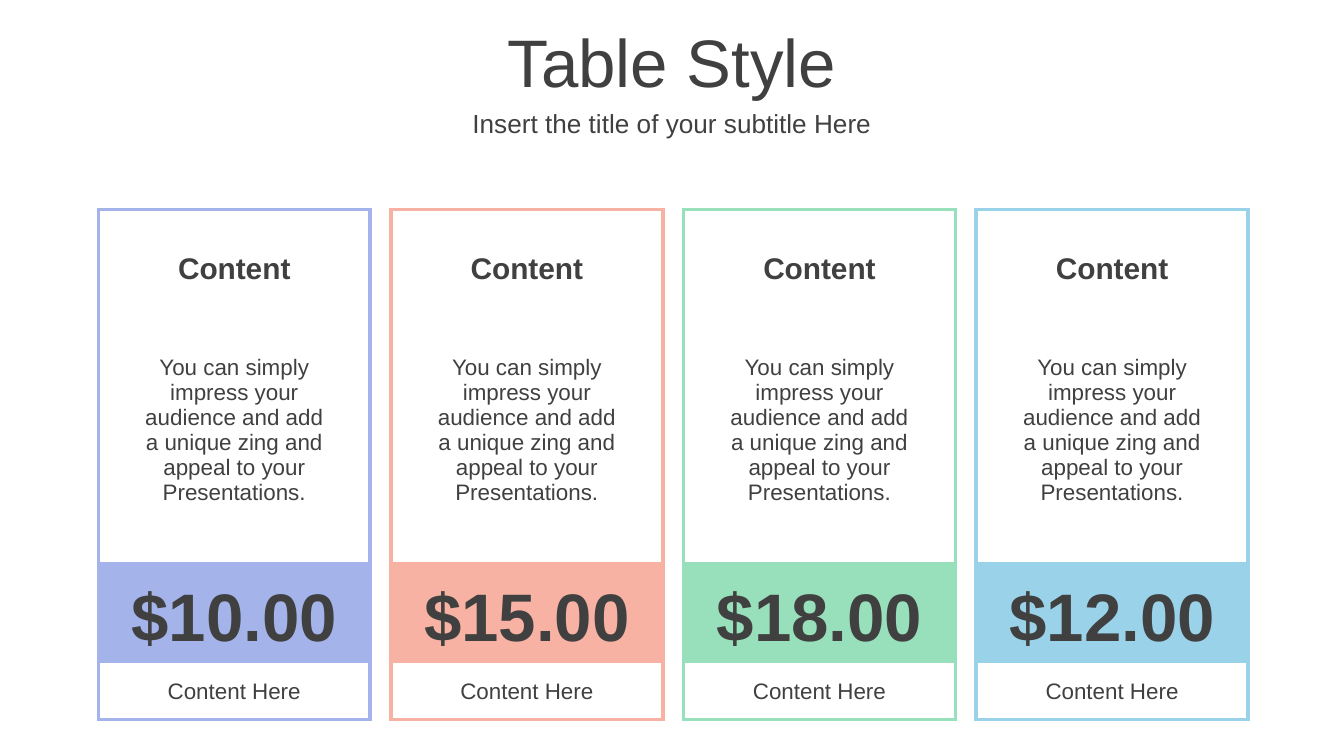
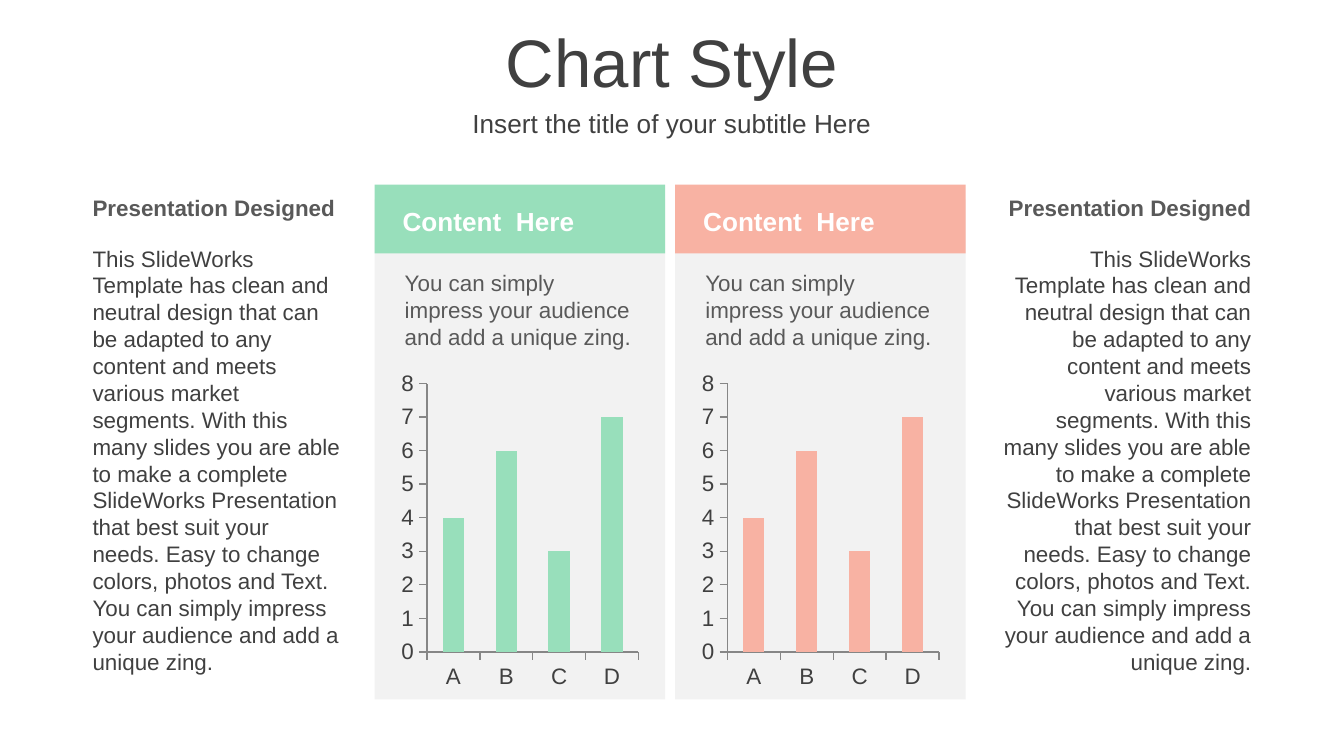
import lxml.etree
import pptx
import pptx.chart.data
import pptx.dml.color
import pptx.enum.chart
import pptx.enum.shapes
import pptx.enum.text
import pptx.oxml.ns
import pptx.util

Cm, Pt = pptx.util.Cm, pptx.util.Pt
ALIGN = pptx.enum.text.PP_ALIGN
ANCHOR = pptx.enum.text.MSO_ANCHOR

FONT = "Arial"
DARK, GREY, PALE, WHITE, AXIS = "404040", "595959", "F2F2F2", "FFFFFF", "868686"
BLUE, CORAL, GREEN, SKY = "A4B4EA", "F8B2A3", "98DFBB", "9AD3E9"

SUBTITLE = "Insert the title of your subtitle Here"
PLANS = [("$10.00", BLUE), ("$15.00", CORAL), ("$18.00", GREEN), ("$12.00", SKY)]
PLAN_NAME = "Content"
PLAN_TEXT = ("You can simply impress your audience and add a unique zing "
             "and appeal to your Presentations.")
PLAN_FOOT = "Content Here"

PANEL_HEADING = "Content  Here"
PANEL_INTRO = "You can simply impress your audience and add a unique zing."
PANEL_COLOURS = [GREEN, CORAL]
CATEGORIES, VALUES = ["A", "B", "C", "D"], [4, 6, 3, 7]
SIDE_HEADING = "Presentation Designed"
SIDE_TEXT = (
    "This SlideWorks Template has clean and neutral design that can be adapted "
    "to any content and meets various market segments. With this many slides "
    "you are able to make a complete SlideWorks Presentation that best suit your "
    "needs. Easy to change colors, photos and Text. You can simply impress your "
    "audience and add a unique zing.")

# Lengths in centimetres
SLIDE_SIZE = 25.4, 14.29
PLAN_LEFT, PLAN_TOP, PLAN_STEP = 1.86, 3.96, 5.53
PLAN_COLUMNS = [0.58, 3.92, 0.58]
PLAN_ROWS = [0.36, 1.07, 0.36, 1.07, 2.46, 0.36, 1.9, 1.07]
PANEL_LEFT, PANEL_STEP, PANEL_WIDTH = 7.08, 5.68, 5.49
SIDES = [(1.5, ALIGN.LEFT), (18.69, ALIGN.RIGHT)]
SIDE_WIDTH = 5.21
LINE = Pt(14.4)


def rgb(colour):
    return pptx.dml.color.RGBColor.from_string(colour)


def style_font(font, size, colour, bold=False):
    font.name, font.size, font.bold = FONT, Pt(size), bold
    font.color.rgb = rgb(colour)


def write(frame, text, size, colour, bold=False, align=ALIGN.LEFT, spacing=None):
    frame.text = text
    frame.word_wrap = True
    paragraph = frame.paragraphs[0]
    paragraph.alignment = align
    if spacing:
        paragraph.line_spacing = spacing
    style_font(paragraph.runs[0].font, size, colour, bold)


def add_text(slide, box, *text, **style):
    write(slide.shapes.add_textbox(*map(Cm, box)).text_frame, *text, **style)


def add_band(slide, box, colour):
    band = slide.shapes.add_shape(
        pptx.enum.shapes.MSO_SHAPE.RECTANGLE, *map(Cm, box))
    band.shadow.inherit = False
    band.fill.solid()
    band.fill.fore_color.rgb = rgb(colour)
    band.line.fill.background()


def add_slide(deck, title):
    """Add a slide with its centred title and subtitle."""
    slide = deck.slides.add_slide(deck.slide_layouts[0])
    headings = [(title, 36, 0.34, 1.6), (SUBTITLE, 14, 1.94, 0.79)]
    for holder, (text, size, top, height) in zip(slide.placeholders, headings):
        holder.left, holder.top = Cm(0), Cm(top)
        holder.width, holder.height = Cm(SLIDE_SIZE[0]), Cm(height)
        write(holder.text_frame, text, size, DARK, align=ALIGN.CENTER)
        holder.text_frame.paragraphs[0].space_before = Pt(0)
        holder.text_frame.vertical_anchor = ANCHOR.MIDDLE
        holder.text_frame.auto_size = pptx.enum.text.MSO_AUTO_SIZE.NONE
    return slide


def add_element(parent, tag, **attributes):
    return lxml.etree.SubElement(parent, pptx.oxml.ns.qn(tag), attributes)


def frame_cell(cell, outer, colour):
    """Draw the sides named in outer, and clear the other ones."""
    properties = cell._tc.get_or_add_tcPr()
    for side in "LRTB":
        line = add_element(properties, f"a:ln{side}", w=str(Pt(2.25)))
        if side in outer:
            fill = add_element(line, "a:solidFill")
            add_element(fill, "a:srgbClr", val=colour)
        else:
            add_element(line, "a:noFill")


def add_plan(slide, left, price, colour):
    rows, columns = len(PLAN_ROWS), len(PLAN_COLUMNS)
    table = slide.shapes.add_table(
        rows, columns, Cm(left), Cm(PLAN_TOP),
        Cm(sum(PLAN_COLUMNS)), Cm(sum(PLAN_ROWS))).table
    table.first_row = table.horz_banding = False
    for column, width in zip(table.columns, PLAN_COLUMNS):
        column.width = Cm(width)
    for row, height in zip(table.rows, PLAN_ROWS):
        row.height = Cm(height)
    table.cell(3, 1).merge(table.cell(4, 1))
    for row in (6, 7):
        table.cell(row, 0).merge(table.cell(row, 2))

    texts = {(1, 1): (PLAN_NAME, 16, DARK, True), (3, 1): (PLAN_TEXT, 12, DARK),
             (6, 0): (price, 36, DARK, True), (7, 0): (PLAN_FOOT, 12, DARK)}
    for row in range(rows):
        for column in range(columns):
            cell = table.cell(row, column)
            span = cell.span_width if cell.is_merge_origin else 1
            outer = [side for side, at_edge in (
                ("L", column == 0), ("R", column + span == columns),
                ("T", row == 0), ("B", row == rows - 1)) if at_edge]
            frame_cell(cell, outer, colour)
            cell.fill.solid()
            cell.fill.fore_color.rgb = rgb(colour if row == 6 else WHITE)
            cell.vertical_anchor = ANCHOR.BOTTOM if row == 6 else ANCHOR.MIDDLE
            if (row, column) in texts:
                write(cell.text_frame, *texts[row, column], align=ALIGN.CENTER)
            else:
                add_element(cell.text_frame.paragraphs[0]._p, "a:endParaRPr",
                            sz="800" if row == 0 else "1100")


def add_columns(slide, box, colour):
    data = pptx.chart.data.CategoryChartData()
    data.categories = CATEGORIES
    data.add_series("Series 1", VALUES)
    chart = slide.shapes.add_chart(
        pptx.enum.chart.XL_CHART_TYPE.COLUMN_STACKED, *map(Cm, box), data).chart
    chart.has_legend = chart.has_title = False
    style_font(chart.font, 12, DARK)
    for axis in (chart.category_axis, chart.value_axis):
        axis.has_major_gridlines = False
        axis.major_tick_mark = pptx.enum.chart.XL_TICK_MARK.OUTSIDE
        axis.format.line.color.rgb = rgb(AXIS)
        style_font(axis.tick_labels.font, 12, DARK)
    chart.value_axis.minimum_scale, chart.value_axis.maximum_scale = 0, 8
    chart.value_axis.major_unit = 1
    plot = chart.plots[0]
    plot.gap_width, plot.overlap, plot.vary_by_categories = 150, 100, False
    fill = plot.series[0].format.fill
    fill.solid()
    fill.fore_color.rgb = rgb(colour)


def add_panel(slide, left, colour):
    add_band(slide, (left, 3.77, PANEL_WIDTH, 9.45), PALE)
    add_band(slide, (left, 3.49, PANEL_WIDTH, 1.3), colour)
    add_text(slide, (left + 0.32, 4.97, 4.85, 1.8), PANEL_INTRO, 12, GREY,
             spacing=LINE)
    add_text(slide, (left + 0.28, 3.76, 4.93, 0.86), PANEL_HEADING, 14, WHITE, True)
    add_columns(slide, (left + 0.41, 6.9, 4.67, 6.25), colour)


def main():
    deck = pptx.Presentation()
    deck.slide_width, deck.slide_height = map(Cm, SLIDE_SIZE)

    prices = add_slide(deck, "Table Style")
    for index, (price, colour) in enumerate(PLANS):
        add_plan(prices, PLAN_LEFT + index * PLAN_STEP, price, colour)

    charts = add_slide(deck, "Chart Style")
    for index, colour in enumerate(PANEL_COLOURS):
        add_panel(charts, PANEL_LEFT + index * PANEL_STEP, colour)
    for left, align in SIDES:
        add_text(charts, (left, 3.49, SIDE_WIDTH, 0.8), SIDE_HEADING, 12, GREY, True,
                 align=align, spacing=1.1)
        add_text(charts, (left, 4.5, SIDE_WIDTH, 8.46), SIDE_TEXT, 12, DARK,
                 align=align, spacing=LINE)

    deck.save("out.pptx")


if __name__ == "__main__":
    main()
